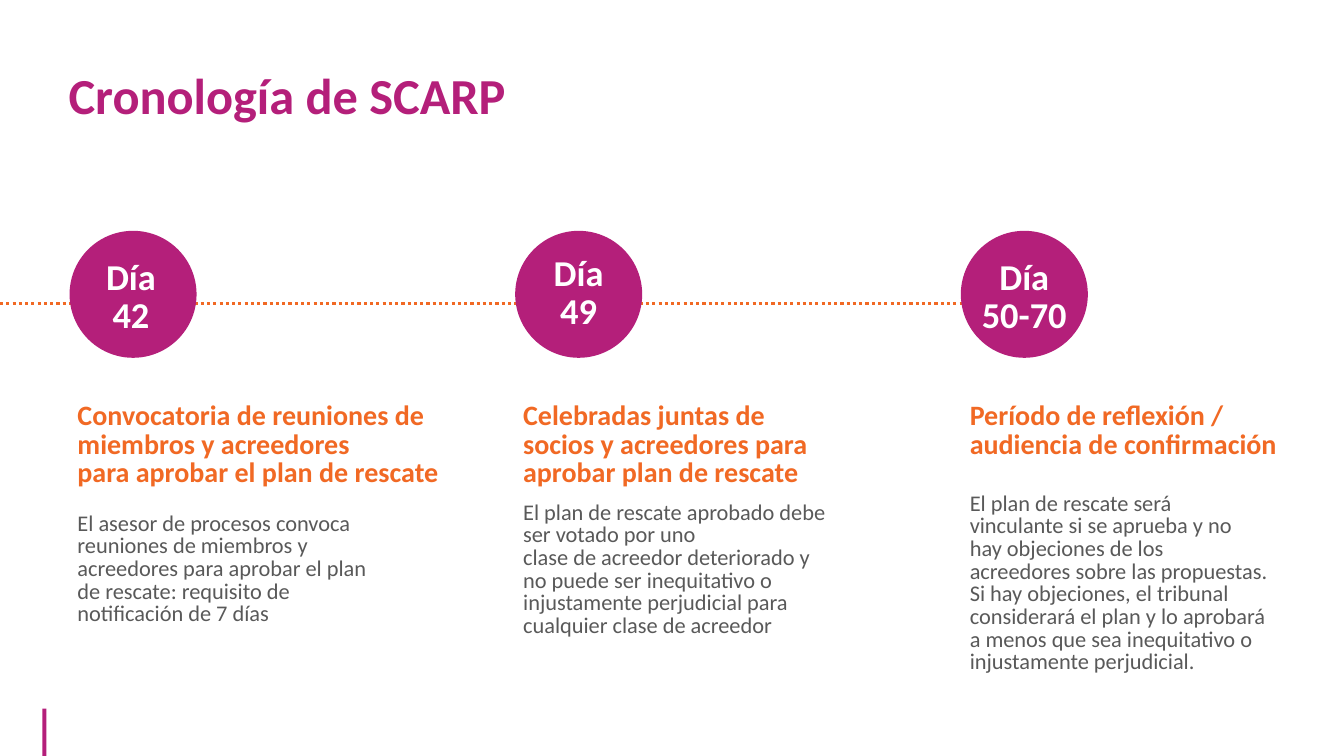
"""Build the SCARP timeline slide with three milestones."""
from lxml import etree
from pptx import Presentation
from pptx.dml.color import RGBColor
from pptx.enum.dml import MSO_LINE
from pptx.enum.shapes import MSO_CONNECTOR, MSO_SHAPE
from pptx.enum.text import MSO_ANCHOR, MSO_AUTO_SIZE, PP_ALIGN
from pptx.oxml.ns import qn
from pptx.util import Pt

PX = 9144
MAGENTA = RGBColor(0xB4, 0x1F, 0x7A)
ORANGE = RGBColor(0xF1, 0x69, 0x24)
GREY = RGBColor(0x59, 0x59, 0x59)
WHITE = RGBColor(0xFF, 0xFF, 0xFF)
LEFT, CENTER = PP_ALIGN.LEFT, PP_ALIGN.CENTER
TOP = MSO_ANCHOR.TOP
NO_FIT, GROW = MSO_AUTO_SIZE.NONE, MSO_AUTO_SIZE.SHAPE_TO_FIT_TEXT
OVAL, BAR = MSO_SHAPE.OVAL, MSO_SHAPE.RECTANGLE
STRAIGHT, DOTTED = MSO_CONNECTOR.STRAIGHT, MSO_LINE.ROUND_DOT

TITLE = {"size": Pt(36), "bold": True, "color": MAGENTA, "align": LEFT, "spacing": 0.8}
DAY = {"size": Pt(26), "bold": True, "color": WHITE, "align": CENTER, "spacing": Pt(27.2)}
HEADING = {"size": Pt(20), "bold": True, "color": ORANGE, "align": LEFT, "spacing": Pt(20.2)}
BODY = {"size": Pt(16), "bold": False, "color": GREY, "align": LEFT, "spacing": Pt(16.2)}

MILESTONES = [
    {
        "left": 69,
        "day": (["Día", "42"], (67, 253, 126, 86)),
        "heading": (["Convocatoria de reuniones de", "miembros y acreedores",
                     "para aprobar el plan de rescate"], (67, 395, 383, 95)),
        "body": (["El asesor de procesos convoca reuniones de miembros y acreedores "
                  "para aprobar el plan de rescate: requisito de notificación de 7 días"],
                 (67, 504, 329, 123)),
    },
    {
        "left": 511,
        "day": (["Día", "49"], (511, 249, 126, 86)),
        "heading": (["Celebradas juntas de socios y acreedores para aprobar plan de rescate"],
                    (509, 395, 310, 95)),
        "body": (["El plan de rescate aprobado debe ser votado por uno",
                  "clase de acreedor deteriorado y no puede ser inequitativo o",
                  "injustamente perjudicial para cualquier clase de acreedor"],
                 (509, 493, 329, 167)),
    },
    {
        "left": 953,
        "day": (["Día", "50-70"], (953, 253, 126, 86)),
        "heading": (["Período de reflexión /", "audiencia de confirmación"],
                    (952, 395, 383, 67)),
        "body": (["El plan de rescate será vinculante si se aprueba y no hay objeciones "
                  "de los acreedores sobre las propuestas. Si hay objeciones, el tribunal "
                  "considerará el plan y lo aprobará a menos que sea inequitativo o "
                  "injustamente perjudicial."], (952, 484, 315, 212)),
    },
]


def scaled(lengths):
    """Turn px lengths into EMU."""
    return [length * PX for length in lengths]


def write(frame, lines, style, fit):
    """Fill a text frame with one paragraph per line."""
    for name, value in {"word_wrap": True, "auto_size": fit, "vertical_anchor": TOP}.items():
        setattr(frame, name, value)
    for index, line in enumerate(lines):
        para = frame.add_paragraph() if index else frame.paragraphs[0]
        settings = {"alignment": style["align"], "line_spacing": style["spacing"],
                    "space_before": Pt(0)}
        for name, value in settings.items():
            setattr(para, name, value)
        span = para.add_run()
        span.text = line
        for name, value in {"name": "Calibri", "size": style["size"],
                            "bold": style["bold"]}.items():
            setattr(span.font, name, value)
        span.font.color.rgb = style["color"]


def add_title(page, text, place):
    """Place and fill the title placeholder."""
    title = page.shapes.title
    for name, value in zip(("left", "top", "width", "height"), scaled(place)):
        setattr(title, name, value)
    write(title.text_frame, [text], TITLE, NO_FIT)


def add_solid(shapes, kind, place):
    """Add a magenta shape without outline."""
    shape = shapes.add_shape(kind, *scaled(place))
    shape.shadow.inherit = False
    shape.fill.solid()
    shape.fill.fore_color.rgb = MAGENTA
    shape.line.fill.background()


def add_timeline(page, start, end):
    """Add the dotted timeline."""
    line = page.shapes.add_connector(STRAIGHT, *scaled(start + end))
    line.line.color.rgb = ORANGE
    line.line.width = Pt(2.25)
    line.line.dash_style = DOTTED
    etree.SubElement(line._element.spPr, qn("a:effectLst"))


def add_milestone(page, milestone):
    """Add a grouped circle with its day, heading and body."""
    shapes = page.shapes.add_group_shape().shapes
    add_solid(shapes, OVAL, (milestone["left"], 229, 126, 126))
    for part, style in (("day", DAY), ("heading", HEADING), ("body", BODY)):
        lines, place = milestone[part]
        write(shapes.add_textbox(*scaled(place)).text_frame, lines, style, GROW)


def main():
    """Build and save the deck."""
    deck = Presentation()
    deck.slide_width, deck.slide_height = scaled((1333, 750))
    page = deck.slides.add_slide(deck.slide_layouts[5])
    add_title(page, "Cronología de SCARP", (58, 70, 880, 64))
    add_solid(page.shapes, BAR, (42, 703, 4, 47))
    add_timeline(page, (0, 301), (1024, 301))
    for milestone in MILESTONES:
        add_milestone(page, milestone)
    deck.save("out.pptx")


if __name__ == "__main__":
    main()
